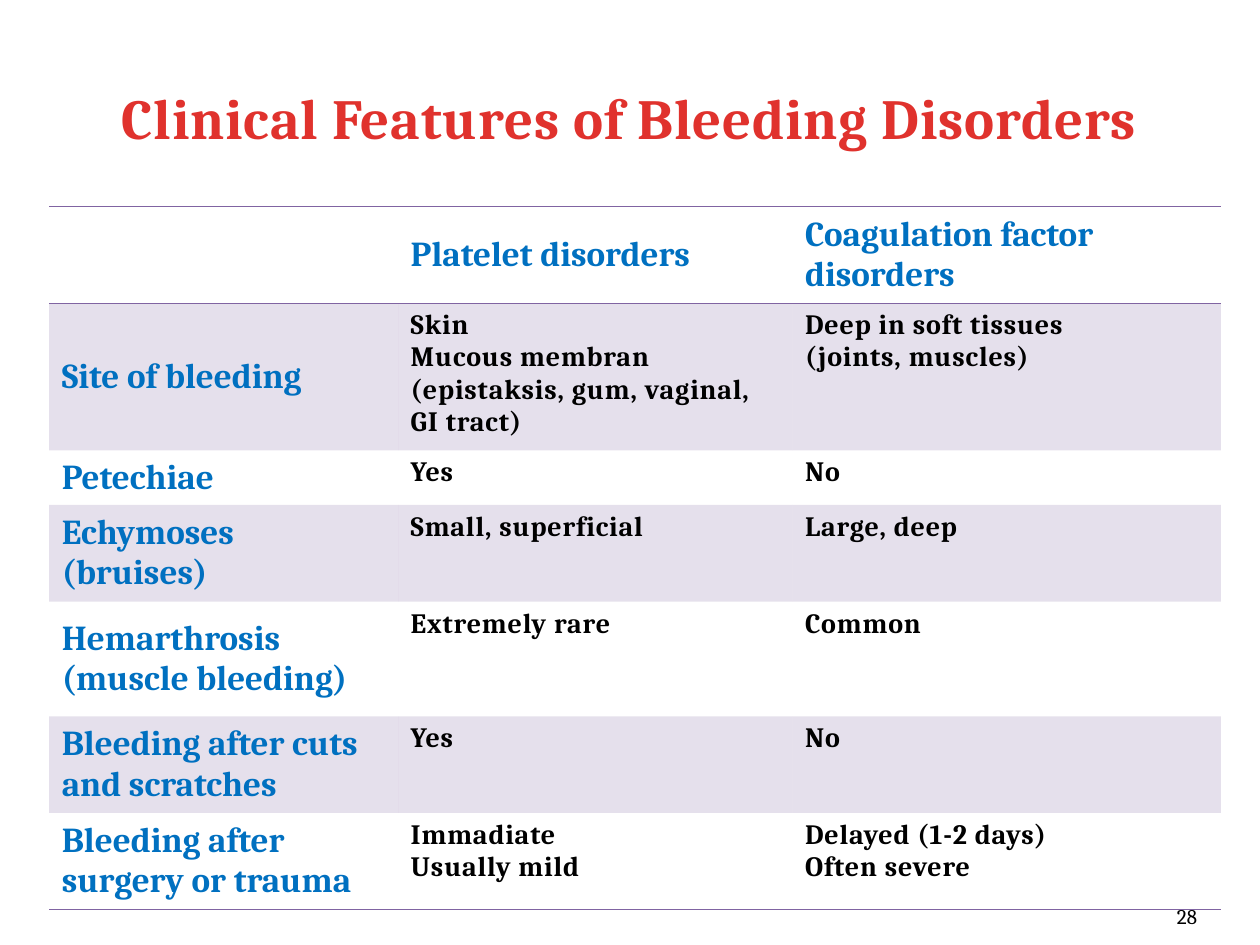
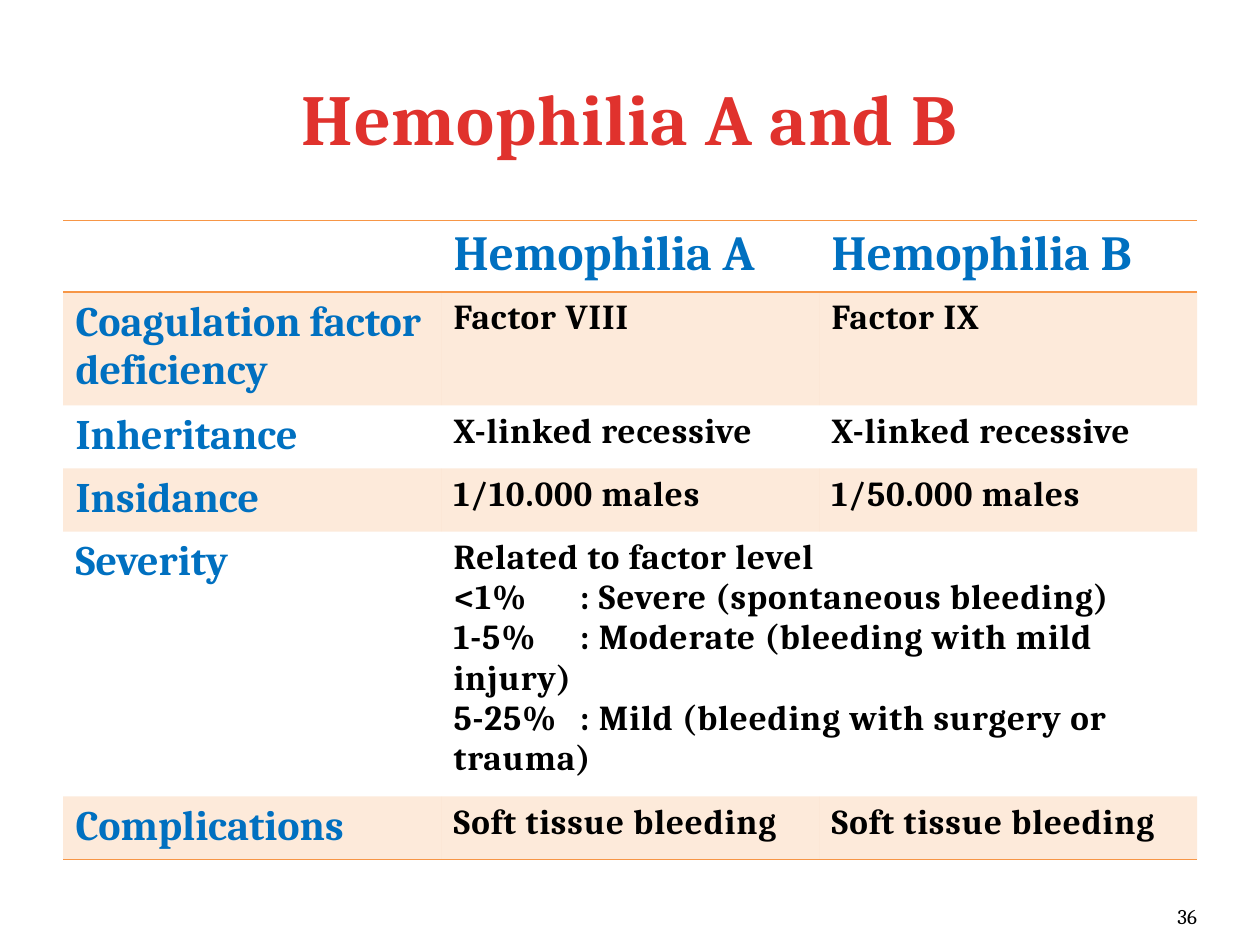
from lxml.etree import SubElement
from pptx import Presentation
from pptx.dml.color import RGBColor
from pptx.enum.text import MSO_ANCHOR, PP_ALIGN
from pptx.oxml import parse_xml
from pptx.oxml.ns import nsdecls, qn
from pptx.util import Inches, Pt

FONT = "Cambria"
TITLE_RED = "E0322D"
LABEL_BLUE = "0070C0"
BLACK = "000000"
PURPLE = "8064A2"
ORANGE = "F79646"
PLAIN_TABLE_STYLE = "{2D5ABB26-0587-4C30-8999-92F81FD0307C}"

# Each cell is text; a line break starts a new paragraph
BLEEDING_ROWS = [
    ["", "Platelet disorders", "Coagulation factor disorders"],
    ["Site of bleeding",
     "Skin\nMucous membran\n(epistaksis, gum, vaginal, GI tract)",
     "Deep in soft tissues\n(joints, muscles)"],
    ["Petechiae", "Yes", "No"],
    ["Echymoses (bruises)", "Small, superficial", "Large, deep"],
    ["Hemarthrosis (muscle bleeding)", "Extremely rare", "Common"],
    ["Bleeding after cuts and scratches", "Yes", "No"],
    ["Bleeding after surgery or trauma",
     "Immadiate\nUsually mild", "Delayed (1-2 days)\nOften severe"],
]

# None means that the cell on the left runs across
HEMOPHILIA_ROWS = [
    ["", "Hemophilia A", "Hemophilia B"],
    ["Coagulation factor deficiency", "Factor VIII", "Factor IX"],
    ["Inheritance", "X-linked recessive", "X-linked recessive"],
    ["Insidance", "1/10.000 males", "1/50.000 males"],
    ["Severity",
     "Related to factor level\n"
     "<1% \t: Severe (spontaneous bleeding)\n"
     "1-5% \t: Moderate (bleeding with mild injury)\n"
     "5-25% \t: Mild (bleeding with surgery or trauma)",
     None],
    ["Complications", "Soft tissue bleeding", "Soft tissue bleeding"],
]


def color(hex_string):
    return RGBColor.from_string(hex_string)


def write(frame, text, size, ink=BLACK, bold=True, spacing=0,
          align=PP_ALIGN.LEFT):
    """Fill a text frame, one paragraph for each line of text."""
    for index, line in enumerate(text.split("\n")):
        paragraph = frame.add_paragraph() if index else frame.paragraphs[0]
        paragraph.alignment = align
        run = paragraph.add_run()
        run.text = line
        run.font.name = FONT
        run.font.size = Pt(size)
        run.font.bold = bold
        run.font.color.rgb = color(ink)
        if spacing:
            run._r.get_or_add_rPr().set("spc", str(round(spacing * 100)))


def add_titled_slide(deck, title, title_size, number):
    slide = deck.slides.add_slide(deck.slide_layouts[5])
    heading = slide.shapes.title
    heading.left, heading.top = Inches(0.5), Inches(0.3)
    heading.width, heading.height = Inches(9), Inches(1.25)
    heading.text_frame.vertical_anchor = MSO_ANCHOR.MIDDLE
    write(heading.text_frame, title, title_size, ink=TITLE_RED, spacing=0.5,
          align=PP_ALIGN.CENTER)

    # Page number
    footer = slide.shapes.add_textbox(
        Inches(8.67), Inches(7.02), Inches(0.83), Inches(0.4)).text_frame
    footer.word_wrap = True
    footer.margin_left = footer.margin_right = 0
    footer.vertical_anchor = MSO_ANCHOR.BOTTOM
    write(footer, str(number), 12, bold=False, align=PP_ALIGN.RIGHT)
    return slide


def shade(cell, accent):
    """Tint a cell with 20% of the accent colour."""
    cell.fill.solid()
    cell.fill.fore_color.rgb = color(accent)
    tone = cell._tc.tcPr.find(qn("a:solidFill"))[0]
    SubElement(tone, qn("a:alpha"), val="20000")


def rule(cell, accent, sides):
    """Draw 1 pt lines on the given sides, in the order T, B."""
    properties = cell._tc.get_or_add_tcPr()
    for position, side in enumerate(sides):
        properties.insert(position, parse_xml(
            f'<a:ln{side} {nsdecls("a")} w="12700"><a:solidFill>'
            f'<a:srgbClr val="{accent}"/></a:solidFill></a:ln{side}>'))


def add_comparison(slide, rows, left, top, widths, heights, accent,
                   header_size, label_size, body_size, label_anchor):
    frame = slide.shapes.add_table(
        len(rows), len(widths), Inches(left), Inches(top),
        Inches(sum(widths)), Inches(sum(heights)))
    for style in frame.element.iter(qn("a:tableStyleId")):
        style.text = PLAIN_TABLE_STYLE
    table = frame.table
    table.first_row = table.horz_banding = False
    for column, width in zip(table.columns, widths):
        column.width = Inches(width)
    for row, height in zip(table.rows, heights):
        row.height = Inches(height)

    last = len(rows) - 1
    for r, texts in enumerate(rows):
        for c, text in enumerate(texts):
            cell = table.cell(r, c)
            # Bands on odd rows, lines around the header and at the end
            if r % 2:
                shade(cell, accent)
            else:
                cell.fill.background()
            if r in (0, last):
                rule(cell, accent, "TB" if r == 0 else "B")
            if text is None:
                table.cell(r, c - 1).merge(cell)
            elif r == 0 or c == 0:
                cell.vertical_anchor = label_anchor
                if text:
                    write(cell.text_frame, text, label_size if r else header_size,
                          ink=LABEL_BLUE)
            else:
                cell.vertical_anchor = MSO_ANCHOR.TOP
                write(cell.text_frame, text, body_size, spacing=0.5)


def main():
    deck = Presentation()
    deck.slide_width, deck.slide_height = Inches(10), Inches(7.5)

    # Platelet against coagulation factor disorders
    features = add_titled_slide(
        deck, "Clinical Features of Bleeding Disorders", 32.4, 28)
    add_comparison(
        features, BLEEDING_ROWS, 0.39, 1.64, widths=[2.77, 3.13, 3.4],
        heights=[0.75, 1.14, 0.43, 0.74, 0.91, 0.75, 0.75], accent=PURPLE,
        header_size=20, label_size=20, body_size=16,
        label_anchor=MSO_ANCHOR.MIDDLE)

    # The two types of hemophilia
    hemophilia = add_titled_slide(deck, "Hemophilia A and B", 41, 36)
    add_comparison(
        hemophilia, HEMOPHILIA_ROWS, 0.5, 1.75, widths=[3] * 3,
        heights=[0.55, 0.86, 0.48, 0.48, 2.02, 0.48], accent=ORANGE,
        header_size=28, label_size=24, body_size=20,
        label_anchor=MSO_ANCHOR.TOP)

    deck.save("out.pptx")


if __name__ == "__main__":
    main()
